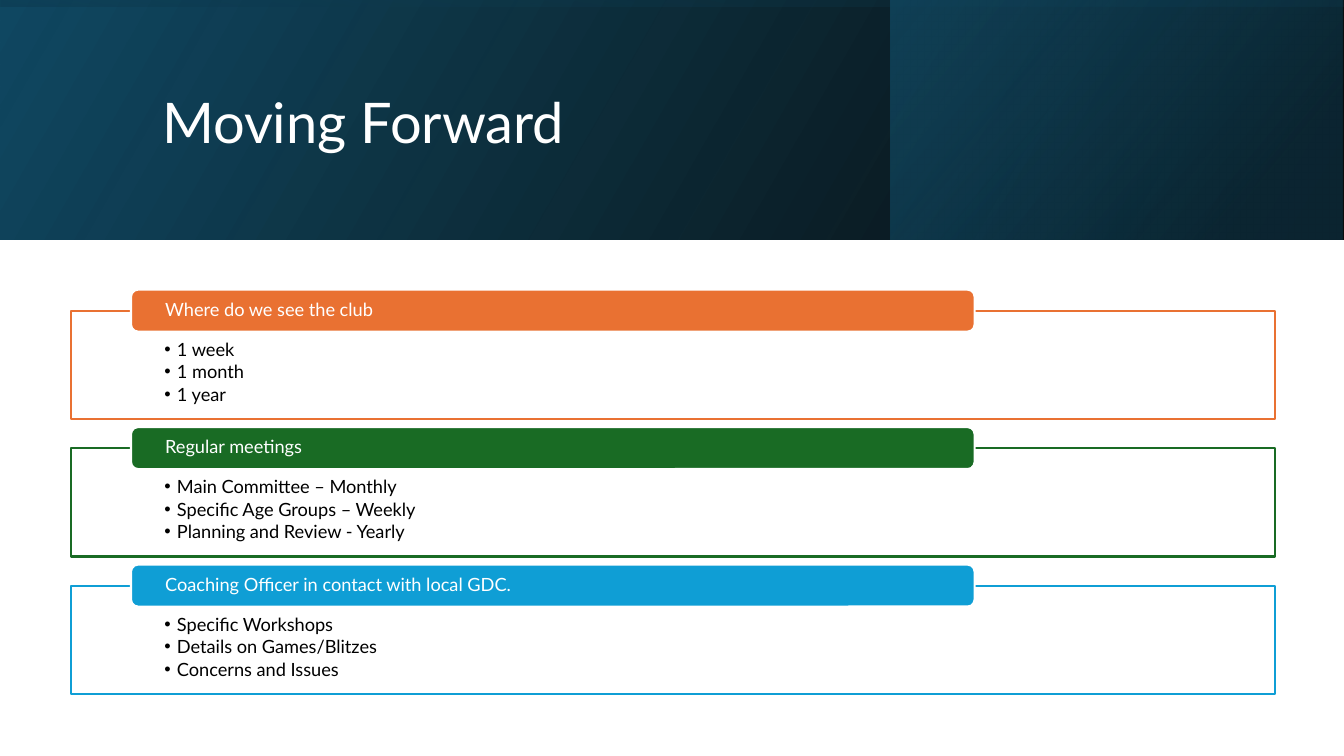
from lxml import etree
from pptx import Presentation
from pptx.dml.color import RGBColor
from pptx.enum.shapes import MSO_SHAPE
from pptx.enum.text import MSO_ANCHOR, PP_ALIGN
from pptx.oxml.ns import qn
from pptx.util import Pt

RECT = MSO_SHAPE.RECTANGLE
ROUND = MSO_SHAPE.ROUNDED_RECTANGLE
TOP, MIDDLE = MSO_ANCHOR.TOP, MSO_ANCHOR.MIDDLE
LEFT = PP_ALIGN.LEFT

HUES = {
    "white": "FFFFFF", "black": "000000", "navy": "104862",
    "deep": "0B3041", "teal": "156082",
    "orange": "E97132", "green": "196B24", "blue": "0F9ED5",
}


def add_box(kind, place, fill=None, line=None):
    box = slide.shapes.add_shape(kind, *[Pt(v) for v in place])
    box.shadow.inherit = False
    if fill:
        box.fill.solid()
        box.fill.fore_color.rgb = RGBColor.from_string(HUES[fill])
    else:
        box.fill.background()
    if line:
        box.line.color.rgb = RGBColor.from_string(HUES[line])
        box.line.width = Pt(1.5)
    else:
        box.line.fill.background()
    return box


def add_text(box, lines, size, hue, pads, anchor, after=0, bullet=False):
    frame = box.text_frame
    frame.word_wrap = True
    frame.vertical_anchor = anchor
    frame.margin_left = frame.margin_right = Pt(pads[0])
    frame.margin_top, frame.margin_bottom = Pt(pads[1]), Pt(pads[2])
    for i, line in enumerate(lines):
        para = frame.add_paragraph() if i else frame.paragraphs[0]
        para.alignment = LEFT
        para.line_spacing = 0.9
        para.space_after = Pt(after)
        if bullet:
            props = para._p.get_or_add_pPr()
            props.set("marL", str(Pt(9)))
            props.set("indent", str(Pt(-9)))
            etree.SubElement(props, qn("a:buFont")).set("typeface", "Arial")
            etree.SubElement(props, qn("a:buChar")).set("char", "•")
        run = para.add_run()
        run.text = line
        run.font.name = "Lato"
        run.font.size = Pt(size)
        run.font.color.rgb = RGBColor.from_string(HUES[hue])


deck = Presentation()
deck.slide_width, deck.slide_height = Pt(960), Pt(540)
slide = deck.slides.add_slide(deck.slide_layouts[6])

BAND = 171
bands = [
    ((0, 0, 960, BAND), 0, 330, [(0, "black", 96), (100, "navy", 100)]),
    ((636, 0, 323, BAND), 0, 320, [(19, "deep", 68), (100, "teal", 48)]),
    ((394.5, -394.5, BAND, 960), 270, 350, [(23, "navy", 16), (99, "black", 45)]),
]
bands[0][3][1] = (100, "navy", 100)
for place, turn, angle, stops in bands:
    band = add_box(RECT, place)
    band.rotation = turn
    props = band._element.spPr
    props.find(qn("a:xfrm")).set("flipH", "1")
    grad = etree.Element(qn("a:gradFill"), rotWithShape="1")
    items = etree.SubElement(grad, qn("a:gsLst"))
    for pos, hue, alpha in stops:
        stop = etree.SubElement(items, qn("a:gs"), pos=str(pos * 1000))
        tint = etree.SubElement(stop, qn("a:srgbClr"), val=HUES[hue])
        etree.SubElement(tint, qn("a:alpha"), val=str(alpha * 1000))
    etree.SubElement(grad, qn("a:lin"), ang=str(angle * 60000), scaled="0")
    props.replace(props.find(qn("a:noFill")), grad)

title = slide.shapes.add_textbox(Pt(108.7), Pt(27.4), Pt(765.4), Pt(123.8))
add_text(title, ["Moving Forward"], 40, "white", (7.2, 3.6, 3.6), MIDDLE)

topics = [
    ("orange", "Where do we see the club", ["1 week", "1 month", "1 year"]),
    ("green", "Regular meetings",
     ["Main Committee – Monthly", "Specific Age Groups – Weekly",
      "Planning and Review - Yearly"]),
    ("blue", "Coaching Officer in contact with local GDC.",
     ["Specific Workshops", "Details on Games/Blitzes", "Concerns and Issues"]),
]
for i, (hue, head, points) in enumerate(topics):
    y = 221.9 + i * 98.2
    panel = add_box(RECT, (50.4, y, 860.4, 77.4), "white", hue)
    add_text(panel, points, 13, "black", (67, 21.3, 7.2), TOP, 2, True)
    label = add_box(ROUND, (93.6, y - 15, 602.6, 30), hue, "white")
    add_text(label, [head], 13, "white", (23, 0, 0), MIDDLE)

deck.save("out.pptx")
